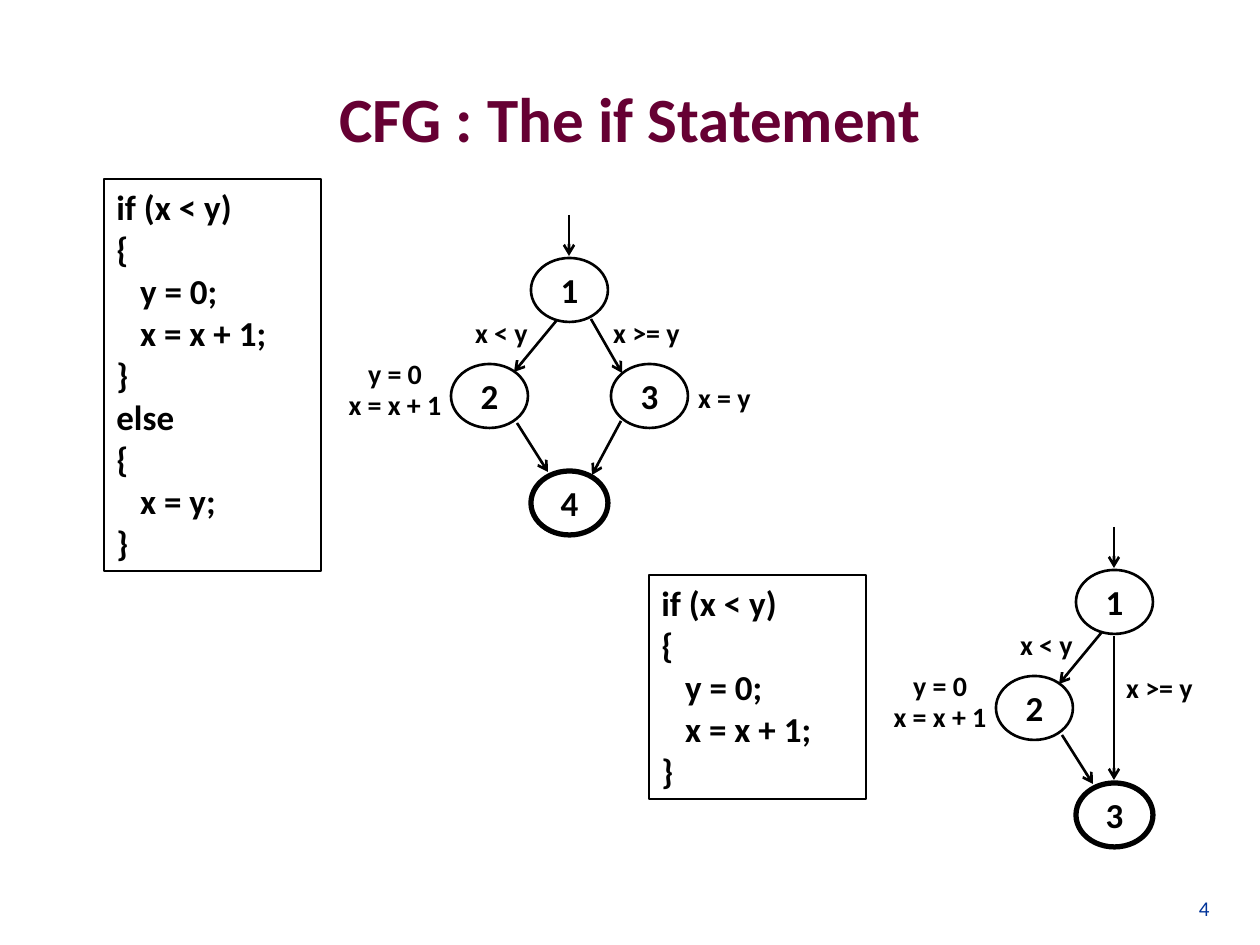
from dataclasses import dataclass

from lxml.etree import SubElement
from pptx import Presentation
from pptx.dml.color import RGBColor
from pptx.enum.shapes import MSO_CONNECTOR as Connector, MSO_SHAPE as Shape
from pptx.enum.text import MSO_ANCHOR as Anchor, PP_ALIGN as Align
from pptx.oxml.ns import qn
from pptx.util import Emu, Pt

PX_PER_INCH = 126
BLACK = RGBColor(0x00, 0x00, 0x00)
MAROON = RGBColor(0x66, 0x00, 0x33)
BLUE = RGBColor(0x00, 0x33, 0x99)
FONT = "Calibri"
NODE_WIDTH, NODE_HEIGHT = 77, 64

IF_BLOCK = "if (x < y)\n{\n   y = 0;\n   x = x + 1;\n}"
ELSE_BLOCK = "\nelse\n{\n   x = y;\n}"


@dataclass(frozen=True)
class Node:
    text: str
    x: int
    y: int
    final: bool = False


@dataclass(frozen=True)
class Edge:
    x1: int
    y1: int
    x2: int
    y2: int


@dataclass(frozen=True)
class Label:
    text: str
    x: int
    y: int
    width: int = 103
    height: int = 47


@dataclass(frozen=True)
class FlowGraph:
    x: int
    y: int
    nodes: tuple[Node, ...]
    edges: tuple[Edge, ...]
    labels: tuple[Label, ...]


@dataclass(frozen=True)
class CodeBox:
    text: str
    x: int
    y: int
    width: int
    height: int


SHARED_NODES = (Node("1", 0, 0), Node("2", -80, 106))
SHARED_EDGES = (
    Edge(0, -75, 0, -34),
    Edge(-12, 30, -55, 82),
    Edge(-52, 133, -21, 182),
)
SHARED_LABELS = (
    Label("x < y", -119, 19),
    Label("y = 0\nx = x + 1", -239, 75, 130, 63),
)

GRAPHS = (
    FlowGraph(
        569, 290,
        SHARED_NODES + (Node("3", 80, 106), Node("4", 0, 213, final=True)),
        SHARED_EDGES + (Edge(22, 29, 53, 83), Edge(52, 131, 23, 185)),
        SHARED_LABELS + (Label("x >= y", 26, 19), Label("x = y", 104, 84)),
    ),
    FlowGraph(
        1114, 602,
        SHARED_NODES + (Node("3", 0, 213, final=True),),
        SHARED_EDGES + (Edge(0, 34, 0, 178),),
        SHARED_LABELS + (Label("x >= y", -6, 62),),
    ),
)
CODE_BOXES = (
    CodeBox(IF_BLOCK + ELSE_BLOCK, 104, 179, 217, 392),
    CodeBox(IF_BLOCK, 649, 575, 217, 224),
)


def px(value: int) -> Emu:
    return Emu(round(value * 914400 / PX_PER_INCH))


def write(shape, text: str, size: int, color: RGBColor = BLACK, bold: bool = True,
          align: Align = Align.CENTER, anchor: Anchor = Anchor.TOP) -> None:
    frame = shape.text_frame
    frame.text = text
    frame.word_wrap = True
    frame.vertical_anchor = anchor
    for paragraph in frame.paragraphs:
        paragraph.alignment = align
        for run in paragraph.runs:
            run.font.name = FONT
            run.font.size = Pt(size)
            run.font.bold = bold
            run.font.color.rgb = color


def add_text(shapes, x: int, y: int, width: int, height: int):
    return shapes.add_textbox(px(x), px(y), px(width), px(height))


def add_outline(shapes, kind: Shape, x: int, y: int, width: int, height: int,
                weight: float):
    shape = shapes.add_shape(kind, px(x), px(y), px(width), px(height))
    shape.shadow.inherit = False
    shape.fill.background()
    shape.line.color.rgb = BLACK
    shape.line.width = Pt(weight)
    return shape


def add_code(shapes, code: CodeBox) -> None:
    shape = add_outline(shapes, Shape.RECTANGLE, code.x, code.y, code.width, code.height, 1)
    write(shape, code.text, 20, align=Align.LEFT)


def add_node(shapes, graph: FlowGraph, node: Node) -> None:
    left = graph.x + node.x - NODE_WIDTH // 2
    top = graph.y + node.y - NODE_HEIGHT // 2
    shape = add_outline(shapes, Shape.OVAL, left, top, NODE_WIDTH, NODE_HEIGHT,
                        3 if node.final else 1.5)
    write(shape, node.text, 20, anchor=Anchor.MIDDLE)
    frame = shape.text_frame
    frame.margin_left = frame.margin_right = frame.margin_top = frame.margin_bottom = 0


def add_edge(shapes, graph: FlowGraph, edge: Edge) -> None:
    connector = shapes.add_connector(
        Connector.STRAIGHT,
        px(graph.x + edge.x1), px(graph.y + edge.y1),
        px(graph.x + edge.x2), px(graph.y + edge.y2),
    )
    connector.line.color.rgb = BLACK
    connector.line.width = Pt(1.5)
    SubElement(connector.line._get_or_add_ln(), qn("a:tailEnd"), type="arrow")
    SubElement(connector._element.spPr, qn("a:effectLst"))


def add_label(shapes, graph: FlowGraph, label: Label) -> None:
    box = add_text(shapes, graph.x + label.x, graph.y + label.y, label.width, label.height)
    write(box, label.text, 16)
    paragraphs = box.text_frame.paragraphs
    if len(paragraphs) > 1:
        for paragraph in paragraphs:
            paragraph.line_spacing = 0.5
        for paragraph in paragraphs[1:]:
            paragraph.space_before = Pt(8)


def add_graph(slide, graph: FlowGraph) -> None:
    shapes = slide.shapes.add_group_shape().shapes
    for node in graph.nodes:
        add_node(shapes, graph, node)
    for edge in graph.edges:
        add_edge(shapes, graph, edge)
    for label in graph.labels:
        add_label(shapes, graph, label)


def main() -> None:
    presentation = Presentation()
    presentation.slide_width = px(1260)
    presentation.slide_height = px(945)
    slide = presentation.slides.add_slide(presentation.slide_layouts[6])

    title = add_text(slide.shapes, 63, 38, 1134, 158)
    write(title, "CFG : The if Statement", 36, MAROON, anchor=Anchor.MIDDLE)
    number = add_text(slide.shapes, 1135, 861, 87, 66)
    write(number, "4", 12, BLUE, bold=False, align=Align.RIGHT, anchor=Anchor.BOTTOM)

    for code, graph in zip(CODE_BOXES, GRAPHS):
        add_code(slide.shapes, code)
        add_graph(slide, graph)
    presentation.save("out.pptx")


if __name__ == "__main__":
    main()
